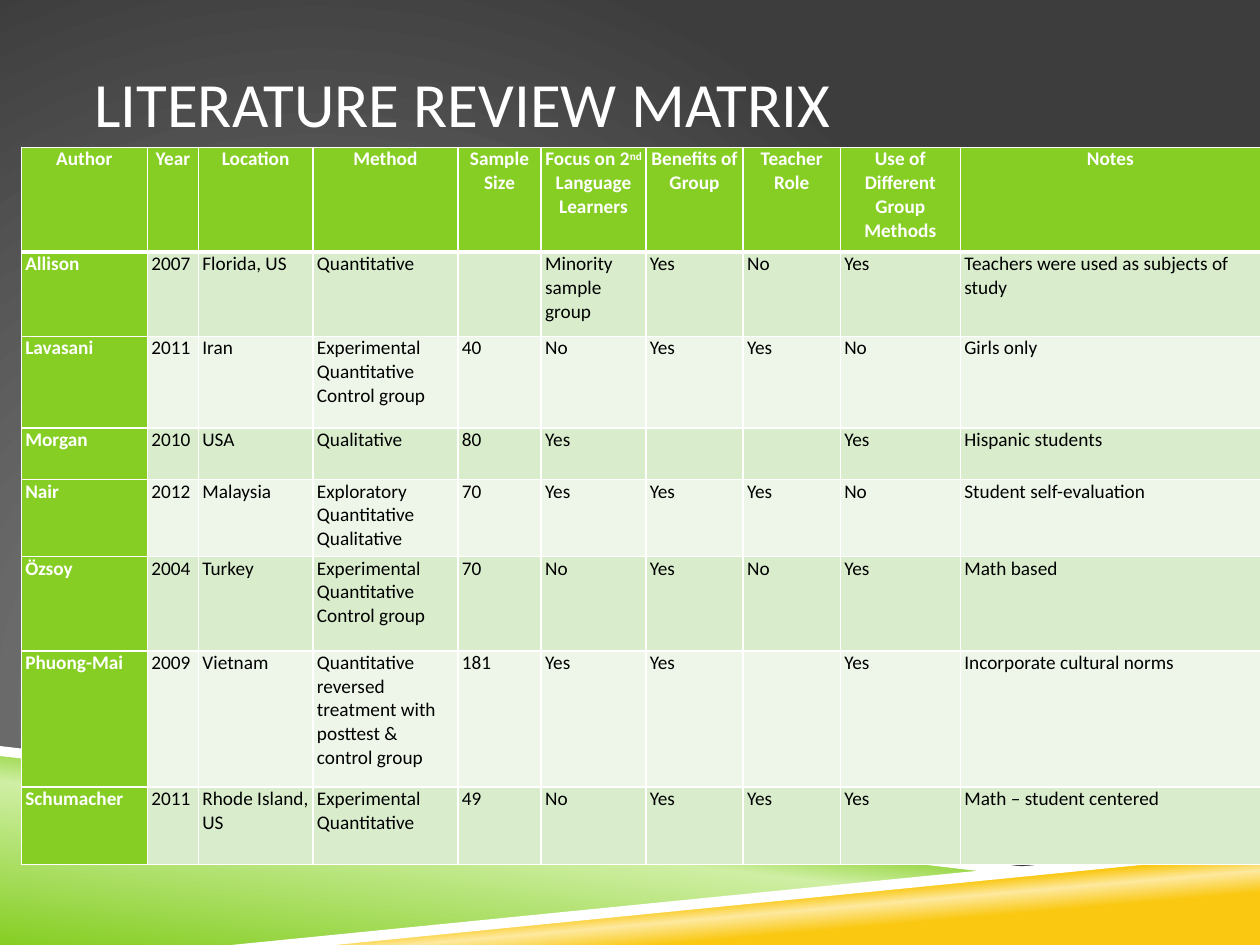
from lxml import etree
from pptx import Presentation
from pptx.dml.color import RGBColor
from pptx.enum.text import MSO_ANCHOR, PP_ALIGN
from pptx.oxml.ns import qn
from pptx.util import Cm, Pt

MIDDLE = MSO_ANCHOR.MIDDLE
CENTER = PP_ALIGN.CENTER
LEFT = PP_ALIGN.LEFT

FONT = "Calibri"
HEX = {
    "white": "FFFFFF", "black": "000000",
    "green": "86CE24", "lime": "CFEFA4",
    "gold": "FAC810", "cream": "FDE99F",
    "gray": "878787", "dark": "3D3D3D",
    "odd": "D9EDCD", "even": "EDF6E8",
}

COLS = [2.54, 1.03, 2.31, 2.92, 1.68, 2.11, 1.96, 1.96, 2.42, 6.05]
ROWS = [2.11, 1.7, 1.85, 1.04, 1.55, 1.9, 2.74, 1.57]
HEAD = ["Author", "Year", "Location", "Method", "Sample\nSize",
        "Focus on 2^nd^ Language Learners", "Benefits of Group",
        "Teacher\nRole", "Use of Different Group Methods", "Notes"]
TRIAL = "Experimental\nQuantitative"
BODY = [
    ["Allison", "2007", "Florida, US", "Quantitative", "",
     "Minority sample group", "Yes", "No", "Yes",
     "Teachers were used as subjects of study"],
    ["Lavasani", "2011", "Iran", TRIAL + "\nControl group", "40",
     "No", "Yes", "Yes", "No", "Girls only"],
    ["Morgan", "2010", "USA", "Qualitative", "80",
     "Yes", "", "", "Yes", "Hispanic students"],
    ["Nair", "2012", "Malaysia", "Exploratory\nQuantitative\nQualitative",
     "70", "Yes", "Yes", "Yes", "No", "Student self-evaluation"],
    ["Özsoy", "2004", "Turkey", TRIAL + "\nControl group", "70",
     "No", "Yes", "No", "Yes", "Math based"],
    ["Phuong-Mai", "2009", "Vietnam",
     "Quantitative reversed treatment with posttest & control group", "181",
     "Yes", "Yes", "", "Yes", "Incorporate cultural norms"],
    ["Schumacher", "2011", "Rhode Island, US", TRIAL, "49",
     "No", "Yes", "Yes", "Yes", "Math – student centered"],
]


def color(name):
    return RGBColor.from_string(HEX[name])


def style(run, size, name, bold=False):
    run.font.name = FONT
    run.font.size = Pt(size)
    run.font.bold = bold
    run.font.color.rgb = color(name)


def blend(fill, node, stops, angle=None):
    """Gradient of (percent, colour) stops; circular without an angle."""
    fill.gradient()
    grad = node.find(".//" + qn("a:gradFill"))
    for child in list(grad):
        grad.remove(child)
    group = etree.SubElement(grad, qn("a:gsLst"))
    for pos, name in stops:
        stop = etree.SubElement(group, qn("a:gs"), pos=str(pos * 1000))
        etree.SubElement(stop, qn("a:srgbClr"), val=HEX[name])
    if angle is None:
        ring = etree.SubElement(grad, qn("a:path"), path="circle")
        etree.SubElement(ring, qn("a:fillToRect"), l="50000", t="100000",
                         r="100000", b="50000")
    else:
        etree.SubElement(grad, qn("a:lin"), ang=str(angle * 60000),
                         scaled="0")


def band(slide, box, points):
    left, top, _, _ = box
    dots = [(Cm(x), Cm(y)) for x, y in points]
    pen = slide.shapes.build_freeform(*dots[0])
    pen.add_line_segments(dots[1:], close=True)
    shape = pen.convert_to_shape(Cm(left), Cm(top))
    shape.shadow.inherit = False
    shape.line.fill.background()
    return shape


def add_bands(slide, box):
    _, _, wide, high = box
    # Coloured wedges
    wedge = band(slide, box, [(0, 0.12), (20.12, 2.54), (5.08, high),
                              (0, high)])
    blend(wedge.fill, wedge.element,
          [(0, "green"), (52, "lime"), (66, "green")], 277)
    wedge = band(slide, box, [(5.03, high), (wide, 2.03), (wide, high)])
    blend(wedge.fill, wedge.element,
          [(28, "gold"), (40, "cream"), (48, "gold")], 265)
    # White stripes
    for points in (
        [(0, 0), (0, 0.2), (20.07, 2.56), (21.13, 2.49)],
        [(wide, 1.95), (4.67, high), (6.76, high), (wide, 2.16)],
    ):
        stripe = band(slide, box, points)
        stripe.fill.solid()
        stripe.fill.fore_color.rgb = color("white")


def add_title(slide, box, text):
    frame = slide.shapes.add_textbox(*map(Cm, box)).text_frame
    frame.word_wrap = True
    frame.vertical_anchor = MIDDLE
    frame.margin_left = frame.margin_right = 0
    frame.text = text
    style(frame.paragraphs[0].runs[0], 36, "white")


def edge(cell, side, width):
    line = etree.SubElement(cell._tc.get_or_add_tcPr(), qn("a:ln" + side),
                            w=str(Pt(width)))
    fill = etree.SubElement(line, qn("a:solidFill"))
    etree.SubElement(fill, qn("a:srgbClr"), val=HEX["white"])


def fill_cell(cell, text, row, col):
    label = row == 0 or col == 0
    # Borders, thick below the header
    thick = {"T": 1, "B": 0}
    for side in "LRTB":
        edge(cell, side, 3 if thick.get(side) == row else 1)
    shade = "green" if label else "odd" if row % 2 else "even"
    cell.fill.solid()
    cell.fill.fore_color.rgb = color(shade)
    cell.margin_left = cell.margin_right = Cm(0.08)
    cell.margin_top = cell.margin_bottom = 0
    # Text, with raised parts between carets
    cell.text_frame.text = text
    for para in cell.text_frame.paragraphs:
        para.alignment = CENTER if row == 0 else LEFT
        parts = para.text.split("^")
        para.text = parts[0]
        for part in parts[1:]:
            para.add_run().text = part
        for i, run in enumerate(para.runs):
            style(run, 11, "white" if label else "black", label)
            if i % 2:
                run._r.get_or_add_rPr().set("baseline", "30000")


def add_matrix(slide, box):
    table = slide.shapes.add_table(len(ROWS), len(COLS),
                                   *map(Cm, box)).table
    table.horz_banding = False
    for col, wide in zip(table.columns, COLS):
        col.width = Cm(wide)
    for row, high in zip(table.rows, ROWS):
        row.height = Cm(high)
    for r, texts in enumerate([HEAD] + BODY):
        for c, text in enumerate(texts):
            fill_cell(table.cell(r, c), text, r, c)


def main():
    deck = Presentation()
    deck.slide_width, deck.slide_height = Cm(25.4), Cm(19.05)
    slide = deck.slides.add_slide(deck.slide_layouts[6])
    blend(slide.background.fill, slide.element, [(0, "gray"), (100, "dark")])
    add_bands(slide, (0, 15.04, 25.4, 4.01))
    add_title(slide, (1.9, 0.76, 21.6, 2.62), "LITERATURE REVIEW MATRIX")
    add_matrix(slide, (0.43, 2.97, sum(COLS), sum(ROWS)))
    deck.save("out.pptx")


if __name__ == "__main__":
    main()
